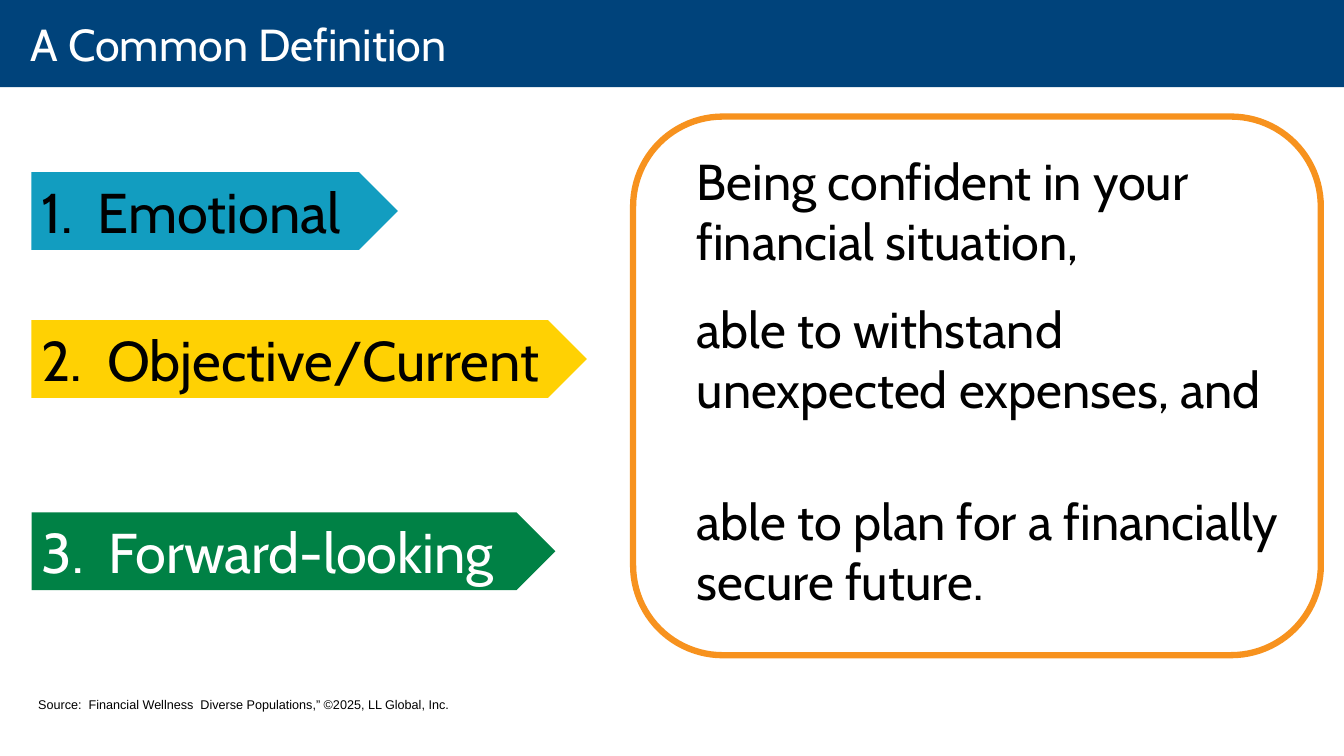
"""Build the slide that defines financial wellness in three parts."""
from dataclasses import dataclass

import pptx
import pptx.dml.color
import pptx.enum.shapes
import pptx.enum.text
import pptx.shapes.autoshape
import pptx.slide
import pptx.util

EMU_PER_PX = 9525
SLIDE_WIDTH, SLIDE_HEIGHT = 1280, 720
TITLE_HEIGHT = 83
PENNANT_LEFT, PENNANT_HEIGHT = 30, 74
PHRASE_LEFT, PHRASE_HEIGHT, PHRASE_RISE = 654, 126, 26
BLACK, WHITE, NAVY, ORANGE = "000000", "FFFFFF", "00437B", "F7921E"
SHAPES = pptx.enum.shapes.MSO_SHAPE
ANCHORS = pptx.enum.text.MSO_ANCHOR


@dataclass
class Box:
    left: int
    top: int
    width: int
    height: int

    def emu(self) -> list[int]:
        return [px(value) for value in (self.left, self.top, self.width, self.height)]


@dataclass
class Aspect:
    label: str
    phrase: str
    top: int
    label_width: int
    phrase_width: int
    fill: str
    label_color: str = BLACK


ASPECTS = [
    Aspect("1.  Emotional", "Being confident in your \vfinancial situation,", 164, 349, 526, "129DC0"),
    Aspect("2.  Objective/Current", "able to withstand unexpected expenses, and", 305, 529, 605, "FFD103"),
    Aspect("3.  Forward-looking", "able to plan for a financially secure future.", 488, 499, 583, "008145", WHITE),
]


def px(value: int) -> int:
    return pptx.util.Emu(value * EMU_PER_PX)


def rgb(color: str) -> pptx.dml.color.RGBColor:
    return pptx.dml.color.RGBColor.from_string(color)


def write(shape: pptx.shapes.autoshape.Shape, text: str, size: int, color: str, font: str = "Cabin") -> None:
    frame = shape.text_frame
    frame.word_wrap = True
    frame.vertical_anchor = ANCHORS.TOP
    paragraph = frame.paragraphs[0]
    paragraph.text = text
    paragraph.alignment = pptx.enum.text.PP_ALIGN.LEFT
    paragraph.font.name = font
    paragraph.font.size = pptx.util.Pt(size)
    paragraph.font.color.rgb = rgb(color)


def add_filled(slide: pptx.slide.Slide, kind: SHAPES, box: Box, fill: str) -> pptx.shapes.autoshape.Shape:
    shape = slide.shapes.add_shape(kind, *box.emu())
    shape.shadow.inherit = False
    shape.fill.solid()
    shape.fill.fore_color.rgb = rgb(fill)
    shape.line.fill.background()
    return shape


def add_title(slide: pptx.slide.Slide, text: str) -> None:
    bar = add_filled(slide, SHAPES.RECTANGLE, Box(0, 0, SLIDE_WIDTH, TITLE_HEIGHT), NAVY)
    write(bar, text, 32, WHITE)
    frame = bar.text_frame
    frame.vertical_anchor = ANCHORS.MIDDLE
    frame.margin_left, frame.margin_right = px(29), px(19)
    frame.margin_top = frame.margin_bottom = 0


def add_aspect(slide: pptx.slide.Slide, aspect: Aspect) -> None:
    pennant_box = Box(PENNANT_LEFT, aspect.top, aspect.label_width, PENNANT_HEIGHT)
    pennant = add_filled(slide, SHAPES.PENTAGON, pennant_box, aspect.fill)
    write(pennant, aspect.label, 40, aspect.label_color)
    phrase_box = Box(PHRASE_LEFT, aspect.top - PHRASE_RISE, aspect.phrase_width, PHRASE_HEIGHT)
    write(slide.shapes.add_textbox(*phrase_box.emu()), aspect.phrase, 36, BLACK)


def add_frame(slide: pptx.slide.Slide, box: Box) -> None:
    outline = slide.shapes.add_shape(SHAPES.ROUNDED_RECTANGLE, *box.emu())
    outline.shadow.inherit = False
    outline.fill.background()
    outline.line.color.rgb = rgb(ORANGE)
    outline.line.width = pptx.util.Pt(4.5)


def main() -> None:
    presentation = pptx.Presentation()
    presentation.slide_width, presentation.slide_height = px(SLIDE_WIDTH), px(SLIDE_HEIGHT)
    slide = presentation.slides.add_slide(presentation.slide_layouts[6])
    add_title(slide, "A Common Definition")
    for aspect in ASPECTS:
        add_aspect(slide, aspect)
    add_frame(slide, Box(603, 111, 655, 513))
    source = slide.shapes.add_textbox(*Box(27, 659, 498, 24).emu())
    write(source, "Source:  Financial Wellness  Diverse Populations,” ©2025, LL Global, Inc.", 9, BLACK, "Arial")
    presentation.save("out.pptx")


if __name__ == "__main__":
    main()
